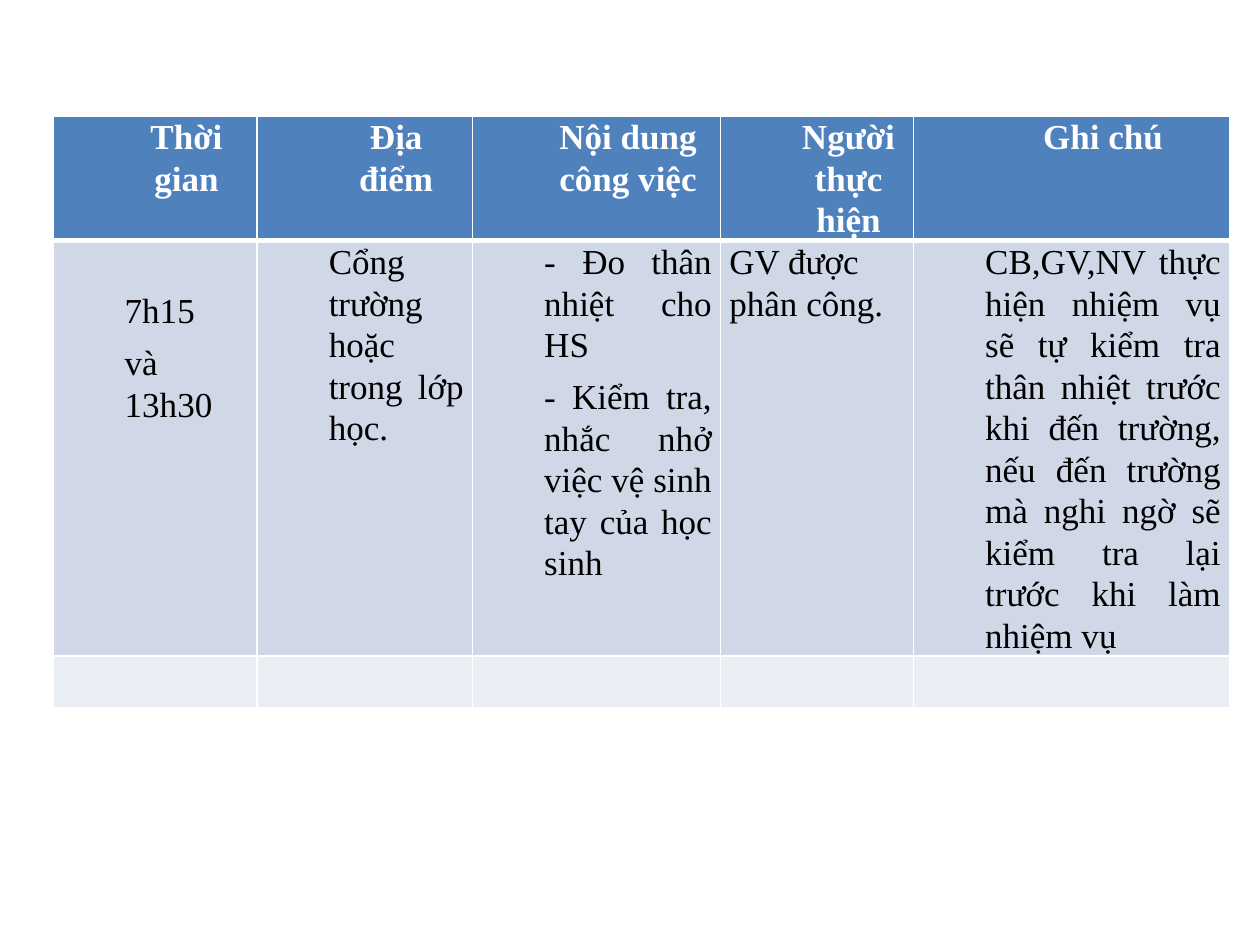
from dataclasses import dataclass

import lxml.etree
import pptx
import pptx.dml.color
import pptx.enum.text
import pptx.oxml.ns
import pptx.util

Inches = pptx.util.Inches
Pt = pptx.util.Pt
Align = pptx.enum.text.PP_ALIGN
qn = pptx.oxml.ns.qn

FONT = "Times New Roman"
WHITE = "FFFFFF"
COLUMN_WIDTHS = (1.62, 1.71, 1.97, 1.53, 2.51)
ROW_HEIGHT = 0.41


@dataclass(frozen=True)
class RowStyle:
    fill: str
    color: str
    bold: bool
    align: Align
    top_border: float
    bottom_border: float


@dataclass(frozen=True)
class Entry:
    lines: tuple[str, ...] = ()
    indented: bool = True
    top_margin: float = 0


HEADER = RowStyle("4F81BD", WHITE, True, Align.CENTER, 1, 3)
DUTY = RowStyle("D0D8E8", "000000", False, Align.JUSTIFY, 3, 1)
SPARE = RowStyle("E9EDF4", "000000", False, Align.JUSTIFY, 1, 1)

SCHEDULE = (
    (HEADER, (
        Entry(("Thời gian",)),
        Entry(("Địa điểm",)),
        Entry(("Nội dung công việc",)),
        Entry(("Người thực hiện",)),
        Entry(("Ghi chú",)),
    )),
    (DUTY, (
        Entry(("7h15", "và 13h30"), top_margin=0.39),
        Entry(("Cổng trường hoặc trong lớp học.",)),
        Entry((
            "- Đo thân nhiệt cho HS",
            "- Kiểm tra, nhắc nhở việc vệ sinh tay của học sinh",
        )),
        Entry(("GV được phân công.",), indented=False),
        Entry((
            "CB,GV,NV thực hiện nhiệm vụ sẽ tự kiểm tra thân nhiệt trước khi "
            "đến trường, nếu đến trường mà nghi ngờ sẽ kiểm tra lại trước khi "
            "làm nhiệm vụ",
        )),
    )),
    (SPARE, (Entry(),) * len(COLUMN_WIDTHS)),
)


def rgb(value: str) -> pptx.dml.color.RGBColor:
    return pptx.dml.color.RGBColor.from_string(value)


def add_borders(cell, style: RowStyle) -> None:
    properties = cell._tc.get_or_add_tcPr()
    widths = {"lnL": 1, "lnR": 1, "lnT": style.top_border, "lnB": style.bottom_border}
    for side, width in widths.items():
        line = lxml.etree.SubElement(properties, qn(f"a:{side}"), w=str(Pt(width)))
        paint = lxml.etree.SubElement(line, qn("a:solidFill"))
        lxml.etree.SubElement(paint, qn("a:srgbClr"), val=WHITE)


def write_entry(cell, entry: Entry, style: RowStyle) -> None:
    cell.margin_left = cell.margin_right = Inches(0.07)
    cell.margin_top = Inches(entry.top_margin)
    cell.margin_bottom = 0
    cell.text_frame.text = "\n".join(entry.lines)
    for paragraph in cell.text_frame.paragraphs:
        paragraph.line_spacing = 1.07
        if entry.indented:
            paragraph.alignment = style.align
            paragraph.space_before = paragraph.space_after = Pt(3)
            indent = paragraph._p.get_or_add_pPr()
            indent.set("marL", str(Inches(0.5)))
            indent.set("indent", "0")
        for run in paragraph.runs:
            run.font.name = FONT
            run.font.size = Pt(20)
            run.font.bold = style.bold
            run.font.color.rgb = rgb(style.color)


def add_schedule(slide) -> None:
    frame = slide.shapes.add_table(
        len(SCHEDULE), len(COLUMN_WIDTHS),
        Inches(0.42), Inches(0.92), Inches(9.33), Inches(5.07),
    )
    schedule = frame.table
    for column, width in zip(schedule.columns, COLUMN_WIDTHS):
        column.width = Inches(width)
    for row, (style, entries) in zip(schedule.rows, SCHEDULE):
        row.height = Inches(ROW_HEIGHT)
        for cell, entry in zip(row.cells, entries):
            add_borders(cell, style)
            cell.fill.solid()
            cell.fill.fore_color.rgb = rgb(style.fill)
            if entry.lines:
                write_entry(cell, entry, style)
    frame.height = Inches(5.07)


def main() -> None:
    deck = pptx.Presentation()
    deck.slide_width = Inches(10)
    deck.slide_height = Inches(7.5)
    add_schedule(deck.slides.add_slide(deck.slide_layouts[6]))
    deck.save("out.pptx")


if __name__ == "__main__":
    main()
